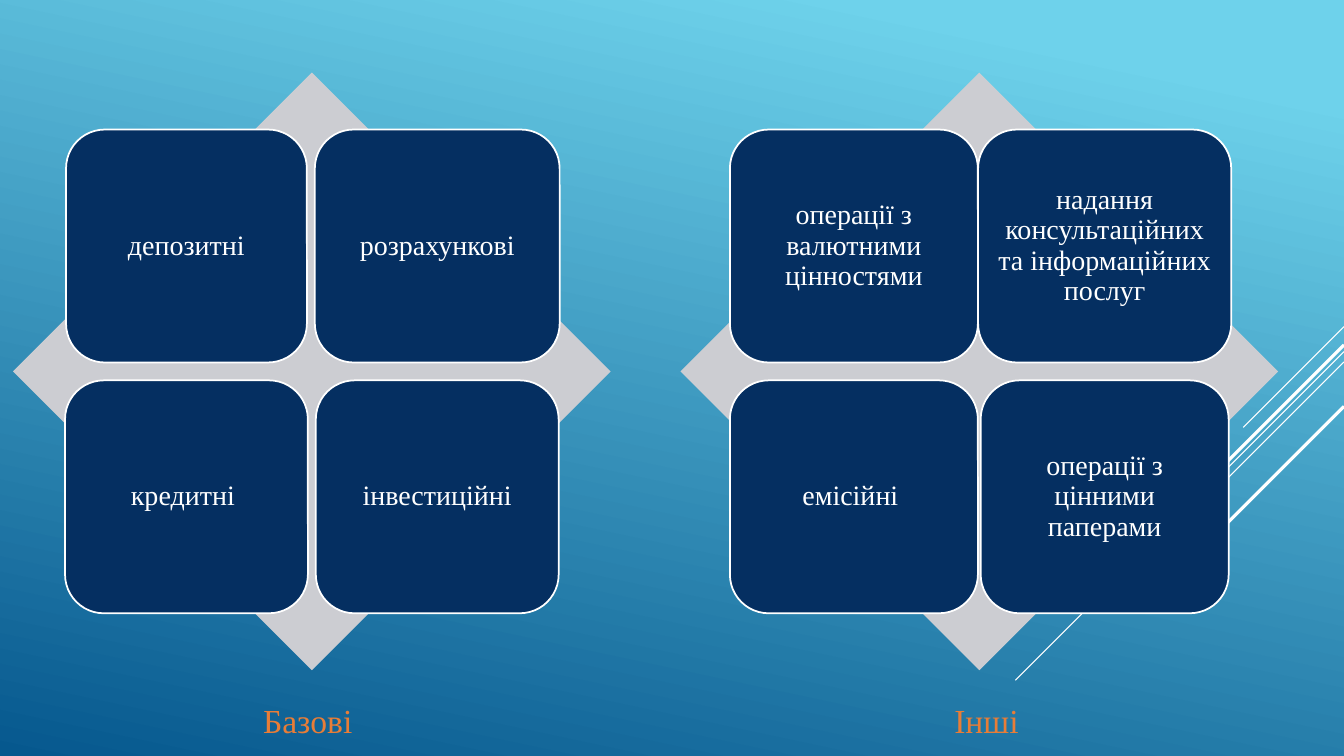
from dataclasses import dataclass

from lxml.etree import SubElement
from pptx import Presentation
from pptx.dml.color import RGBColor
from pptx.enum.shapes import MSO_CONNECTOR, MSO_SHAPE
from pptx.enum.text import MSO_ANCHOR, MSO_AUTO_SIZE, PP_ALIGN
from pptx.oxml.ns import qn
from pptx.util import Cm, Pt


@dataclass(frozen=True)
class Theme:
    """Colours, font and type sizes of the slide."""
    sky: RGBColor = RGBColor(0x6E, 0xD2, 0xEB)
    deep: RGBColor = RGBColor(0x06, 0x58, 0x8E)
    diamond: RGBColor = RGBColor(0xCC, 0xCD, 0xD2)
    tile: RGBColor = RGBColor(0x05, 0x2F, 0x61)
    white: RGBColor = RGBColor(0xFF, 0xFF, 0xFF)
    caption: RGBColor = RGBColor(0xE8, 0x7D, 0x37)
    font: str = "Times New Roman"
    tile_size: Pt = Pt(20)
    caption_size: Pt = Pt(24)


THEME = Theme()
SLIDE_W, SLIDE_H = 33.87, 19.05
DIAMOND_SIDE, DIAMOND_MID_Y = 15.06, 9.36
TILE_H, TILE_OFFSET = 5.87, 3.16
CAPTION_TOP, CAPTION_H = 17.5, 1.27

STRIPES = [
    (8.23, 2.54, 0.75),
    (8.86, 8.28, 0.75),
    (9.12, 5.26, 0.75),
    (8.69, 4.85, 2.25),
    (10.24, 3.53, 2.25),
]
BASIC = [
    ("депозитні", 6.07),
    ("розрахункові", 6.17),
    ("кредитні ", 6.12),
    ("інвестиційні", 6.12),
]
OTHER = [
    ("операції з валютними цінностями", 6.25),
    ("надання консультаційних та інформаційних послуг", 6.38),
    ("емісійні ", 6.25),
    ("операції з цінними паперами", 6.25),
]


def paint_background(s):
    """Fill the background with a gradient from sky to deep blue."""
    fill = s.background.fill
    fill.gradient()
    fill.gradient_angle = 258
    stops = zip(fill.gradient_stops, (0.1, 1), (THEME.sky, THEME.deep))
    for stop, position, color in stops:
        stop.position = position
        stop.color.rgb = color


def add_stripe(s, y, run, weight):
    """Draw a 45-degree line down and left from the right edge."""
    line = s.shapes.add_connector(
        MSO_CONNECTOR.STRAIGHT,
        Cm(SLIDE_W), Cm(y), Cm(SLIDE_W - run), Cm(y + run))
    line.line.color.rgb = THEME.white
    line.line.width = Pt(weight)
    SubElement(line._element.spPr, qn("a:effectLst"))


def add_centred(s, kind, mid_x, mid_y, width, height, color):
    """Add a filled shape around a centre point."""
    sp = s.shapes.add_shape(
        kind, Cm(mid_x - width / 2), Cm(mid_y - height / 2), Cm(width), Cm(height))
    sp.shadow.inherit = False
    sp.fill.solid()
    sp.fill.fore_color.rgb = color
    sp.line.fill.background()
    return sp


def style_run(r, size, color):
    """Give a run its font, size and colour."""
    r.font.name = THEME.font
    r.font.size = size
    r.font.color.rgb = color


def add_tile(s, text, mid_x, mid_y, width):
    """Add a rounded tile with centred text."""
    sp = add_centred(
        s, MSO_SHAPE.ROUNDED_RECTANGLE, mid_x, mid_y, width, TILE_H, THEME.tile)
    sp.line.color.rgb = THEME.white
    sp.line.width = Pt(1.25)
    tf = sp.text_frame
    tf.text = text
    tf.word_wrap = True
    tf.vertical_anchor = MSO_ANCHOR.MIDDLE
    tf.margin_left = tf.margin_right = tf.margin_top = tf.margin_bottom = Cm(0.21)
    p = tf.paragraphs[0]
    p.alignment = PP_ALIGN.CENTER
    p.line_spacing = 0.9
    style_run(p.runs[0], THEME.tile_size, THEME.white)


def add_matrix(s, mid_x, tiles):
    """Add a diamond with a two-by-two grid of tiles on it."""
    add_centred(s, MSO_SHAPE.DIAMOND, mid_x, DIAMOND_MID_Y,
                DIAMOND_SIDE, DIAMOND_SIDE, THEME.diamond)
    for i, (text, width) in enumerate(tiles):
        row, col = divmod(i, 2)
        add_tile(s, text, mid_x + (2 * col - 1) * TILE_OFFSET,
                 DIAMOND_MID_Y + (2 * row - 1) * TILE_OFFSET, width)


def add_caption(s, text, left, width):
    """Add a caption below a matrix."""
    sp = s.shapes.add_textbox(Cm(left), Cm(CAPTION_TOP), Cm(width), Cm(CAPTION_H))
    tf = sp.text_frame
    tf.text = text
    tf.word_wrap = False
    tf.auto_size = MSO_AUTO_SIZE.SHAPE_TO_FIT_TEXT
    style_run(tf.paragraphs[0].runs[0], THEME.caption_size, THEME.caption)


def main():
    """Build the slide and save it."""
    prs = Presentation()
    prs.slide_width, prs.slide_height = Cm(SLIDE_W), Cm(SLIDE_H)
    s = prs.slides.add_slide(prs.slide_layouts[6])
    paint_background(s)
    for y, run, weight in STRIPES:
        add_stripe(s, y, run, weight)
    add_matrix(s, 7.86, BASIC)
    add_matrix(s, 24.68, OTHER)
    add_caption(s, "Базові", 6.38, 2.79)
    add_caption(s, "Інші", 23.8, 2.36)
    prs.save("out.pptx")


if __name__ == "__main__":
    main()
